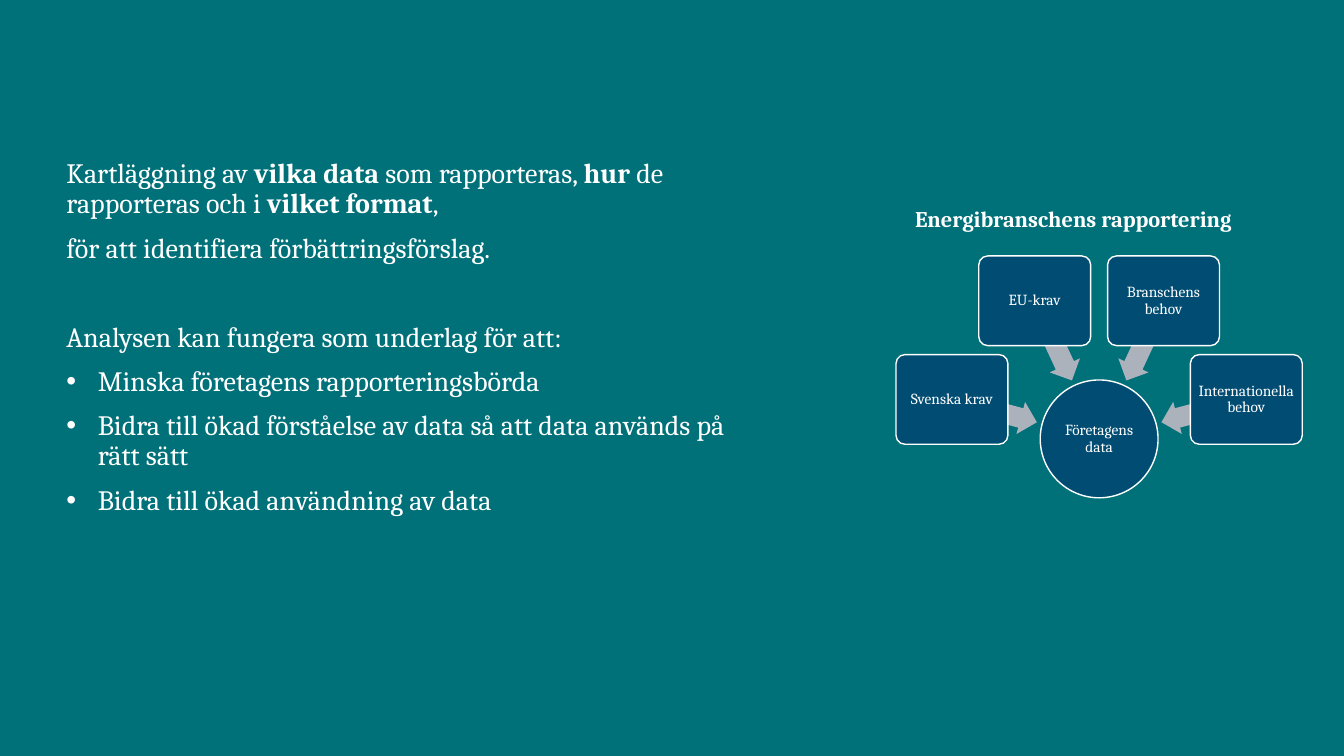
"""Build a slide on mapping the data reporting of the energy sector."""
from math import cos, radians, sin

from lxml.etree import SubElement
from pptx import Presentation
from pptx.dml.color import RGBColor
from pptx.enum.shapes import MSO_SHAPE
from pptx.enum.text import MSO_ANCHOR, MSO_AUTO_SIZE, PP_ALIGN
from pptx.oxml.ns import qn
from pptx.util import Cm, Pt

COLORS = {"background": "007079", "node": "004C73", "arrow": "ABB2BC", "white": "FFFFFF"}
FONT = "Cambria"

INTRO = [
    [("Kartläggning av ", False), ("vilka data", True), (" som rapporteras, ", False),
     ("hur", True), (" de rapporteras och i ", False), ("vilket format", True), (",", False)],
    [("för att identifiera förbättringsförslag.", False)],
]
PURPOSE = [("Analysen kan fungera som underlag för att:", False)]
BENEFITS = [
    "Minska företagens rapporteringsbörda",
    "Bidra till ökad förståelse av data så att data används på rätt sätt",
    "Bidra till ökad användning av data",
]
HEADING = "Energibranschens rapportering"
HUB = "Företagens data"
SOURCES = ["Svenska krav", "EU-krav", "Branschens behov", "Internationella behov"]

HUB_X, HUB_Y, HUB_SIZE = 27.7, 11.06, 2.97
SOURCE_RADIUS, SOURCE_WIDTH, SOURCE_HEIGHT = 3.84, 2.82, 2.26
ARROW_RADIUS, ARROW_WIDTH, ARROW_HEIGHT = 2.73, 2.21, 0.84
FIRST_ANGLE, ANGLE_STEP = 195, 50


def color(name):
    return RGBColor.from_string(COLORS[name])


def write(paragraph, runs, size=11, align=PP_ALIGN.LEFT, before=0, spacing=0.9, bullet=None):
    """Fill a paragraph with (text, bold) runs."""
    if bullet is not None:
        properties = paragraph._p.get_or_add_pPr()
        indent = Cm(0.79) if bullet else 0
        properties.set("marL", str(indent))
        properties.set("indent", str(-indent))
        if bullet:
            SubElement(properties, qn("a:buFont")).set("typeface", "Arial")
            SubElement(properties, qn("a:buChar")).set("char", "•")
        else:
            SubElement(properties, qn("a:buNone"))
    paragraph.alignment = align
    paragraph.line_spacing = spacing
    paragraph.space_before = Pt(before)
    paragraph.space_after = Pt(0)
    for text, bold in runs:
        run = paragraph.add_run()
        run.text = text
        run.font.name = FONT
        run.font.size = Pt(size)
        run.font.bold = bold
        run.font.color.rgb = color("white")


def add_centred(shapes, kind, x, y, width, height, fill):
    shape = shapes.add_shape(kind, Cm(x - width / 2), Cm(y - height / 2), Cm(width), Cm(height))
    shape.shadow.inherit = False
    shape.fill.solid()
    shape.fill.fore_color.rgb = color(fill)
    return shape


def add_node(shapes, kind, x, y, width, height, label):
    node = add_centred(shapes, kind, x, y, width, height, "node")
    node.line.color.rgb = color("white")
    node.line.width = Pt(1)
    frame = node.text_frame
    frame.margin_left = frame.margin_right = frame.margin_top = frame.margin_bottom = Cm(0.05)
    frame.vertical_anchor = MSO_ANCHOR.MIDDLE
    frame.word_wrap = True
    write(frame.paragraphs[0], [(label, False)], align=PP_ALIGN.CENTER)
    return node


def place(radius, angle):
    return HUB_X + radius * cos(radians(angle)), HUB_Y + radius * sin(radians(angle))


def add_body(body):
    body.left, body.top, body.width, body.height = Cm(1.42), Cm(3.89), Cm(17.2), Cm(11.84)
    frame = body.text_frame
    frame.auto_size = MSO_AUTO_SIZE.NONE
    frame.vertical_anchor = MSO_ANCHOR.TOP
    lines = [(INTRO[0], 0, False), (INTRO[1], 10, False), (PURPOSE, 42, False)]
    lines += [([(benefit, False)], 10, True) for benefit in BENEFITS]
    for index, (runs, before, bullet) in enumerate(lines):
        paragraph = frame.add_paragraph() if index else frame.paragraphs[0]
        write(paragraph, runs, size=20, before=before, bullet=bullet)


def add_diagram(shapes):
    add_node(shapes, MSO_SHAPE.OVAL, HUB_X, HUB_Y, HUB_SIZE, HUB_SIZE, HUB)
    for index, label in enumerate(SOURCES):
        angle = FIRST_ANGLE + index * ANGLE_STEP
        arrow = add_centred(shapes, MSO_SHAPE.LEFT_ARROW, *place(ARROW_RADIUS, angle),
                            ARROW_WIDTH, ARROW_HEIGHT, "arrow")
        arrow.line.fill.background()
        arrow.adjustments[0], arrow.adjustments[1] = 0.6, 0.5
        arrow.rotation = angle
        source = add_node(shapes, MSO_SHAPE.ROUNDED_RECTANGLE, *place(SOURCE_RADIUS, angle),
                          SOURCE_WIDTH, SOURCE_HEIGHT, label)
        source.adjustments[0] = 0.1


def main():
    deck = Presentation()
    deck.slide_width, deck.slide_height = Cm(33.87), Cm(19.05)
    slide = deck.slides.add_slide(deck.slide_layouts[1])
    slide.background.fill.solid()
    slide.background.fill.fore_color.rgb = color("background")
    title = slide.shapes.title.element
    title.getparent().remove(title)
    add_body(slide.placeholders[1])
    add_diagram(slide.shapes)
    heading = slide.shapes.add_textbox(Cm(22.81), Cm(5.05), Cm(9.83), Cm(0.94))
    heading.text_frame.word_wrap = True
    write(heading.text_frame.paragraphs[0], [(HEADING, True)], size=16, spacing=1.0)
    deck.save("out.pptx")


if __name__ == "__main__":
    main()
